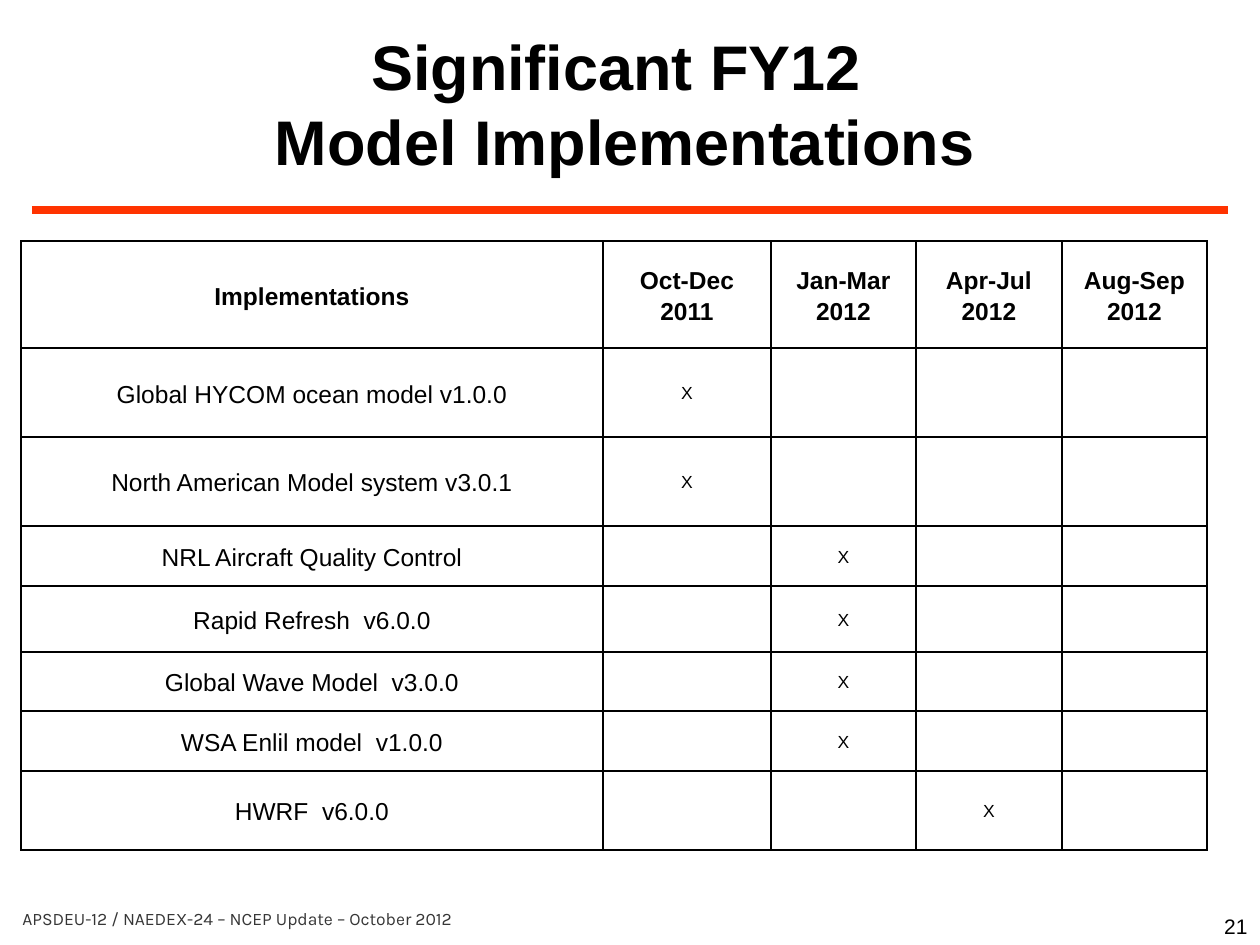
from lxml.etree import SubElement
from pptx import Presentation
from pptx.dml.color import RGBColor
from pptx.enum.shapes import MSO_CONNECTOR
from pptx.enum.text import MSO_ANCHOR, PP_ALIGN
from pptx.oxml.ns import qn
from pptx.util import Pt

BLACK = RGBColor(0x00, 0x00, 0x00)
GRAY = RGBColor(0x36, 0x36, 0x36)
RED = RGBColor(0xFF, 0x33, 0x00)


def px(n):
    return round(n * 914400 / 126)


def write(tf, lines, size, color=BLACK, bold=False, align=PP_ALIGN.CENTER,
          anchor=MSO_ANCHOR.TOP, font="Arial", spacing=None):
    tf.word_wrap = True
    tf.vertical_anchor = anchor
    for i, line in enumerate(lines):
        p = tf.paragraphs[0] if i == 0 else tf.add_paragraph()
        p.text = line
        p.alignment = align
        p.line_spacing = spacing
        p.font.name = font
        p.font.size = Pt(size)
        p.font.bold = bold
        p.font.color.rgb = color


prs = Presentation()
prs.slide_width, prs.slide_height = px(1260), px(945)
s = prs.slides.add_slide(prs.slide_layouts[6])

# Rule under the title
rule = s.shapes.add_connector(MSO_CONNECTOR.STRAIGHT, px(32), px(210), px(1228), px(210))
rule.line.color.rgb = RED
rule.line.width = Pt(4.5)
SubElement(rule._element.spPr, qn("a:effectLst"))

# Title
title = s.shapes.add_textbox(px(231), px(21), px(788), px(165))
write(title.text_frame, ["Significant FY12 ", "Model Implementations"], 36, bold=True)

# Implementation schedule: each model with the column of its quarter
headers = [["Implementations"], ["Oct-Dec", "2011"], ["Jan-Mar", "2012"],
           ["Apr-Jul", "2012"], ["Aug-Sep", "2012"]]
models = [
    ("Global HYCOM ocean model v1.0.0", 1),
    ("North American Model system v3.0.1", 1),
    ("NRL Aircraft Quality Control", 2),
    ("Rapid Refresh  v6.0.0", 2),
    ("Global Wave Model  v3.0.0", 2),
    ("WSA Enlil model  v1.0.0", 2),
    ("HWRF  v6.0.0", 3),
]
col_widths = [582, 168, 145, 146, 145]
row_heights = [107, 89, 89, 60, 66, 59, 60, 79]
table = s.shapes.add_table(len(row_heights), len(col_widths), px(21), px(241),
                           px(sum(col_widths)), px(sum(row_heights))).table
table.first_row = table.horz_banding = False
for col, width in zip(table.columns, col_widths):
    col.width = px(width)
for row, height in zip(table.rows, row_heights):
    row.height = px(height)

# Cell margins, borders and fill
for cell in table.iter_cells():
    cell.vertical_anchor = MSO_ANCHOR.MIDDLE
    cell.margin_left = cell.margin_right = px(9)
    cell.margin_top = cell.margin_bottom = 0
    tcPr = cell._tc.get_or_add_tcPr()
    for side in ("lnL", "lnR", "lnT", "lnB"):
        ln = SubElement(tcPr, qn(f"a:{side}"), w=str(Pt(1)))
        fill = SubElement(ln, qn("a:solidFill"))
        SubElement(fill, qn("a:srgbClr"), val=str(BLACK))
    cell.fill.background()

# Cell text
cell_style = {"anchor": MSO_ANCHOR.MIDDLE, "spacing": 1.15}
for c, lines in enumerate(headers):
    write(table.cell(0, c).text_frame, lines, 14, bold=True, **cell_style)
for r, (model, quarter) in enumerate(models, start=1):
    write(table.cell(r, 0).text_frame, [model], 14, **cell_style)
    write(table.cell(r, quarter).text_frame, ["X"], 10, **cell_style)

# Footer and slide number
footer = s.shapes.add_textbox(px(10), px(892), px(1187), px(53))
write(footer.text_frame, ["APSDEU-12 / NAEDEX-24 – NCEP Update – October 2012"], 10,
      color=GRAY, align=PP_ALIGN.LEFT, anchor=MSO_ANCHOR.MIDDLE, font="Karla")
number = s.shapes.add_textbox(px(998), px(882), px(262), px(63))
write(number.text_frame, ["21"], 12, align=PP_ALIGN.RIGHT, anchor=MSO_ANCHOR.BOTTOM)

prs.save("out.pptx")
